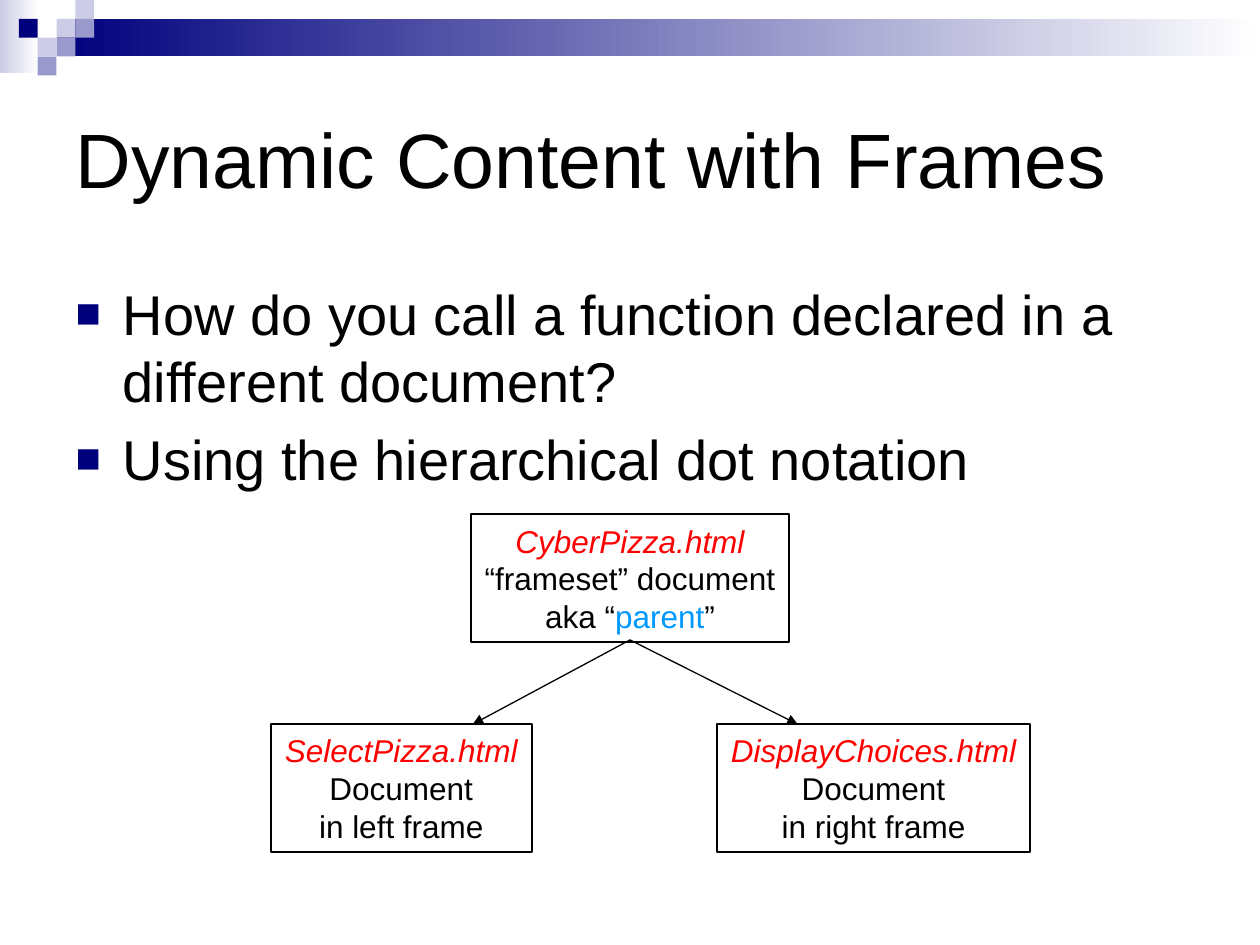
from dataclasses import dataclass

from lxml import etree
from pptx import Presentation
from pptx import util as u
from pptx.dml.color import RGBColor
from pptx.enum import shapes, text
from pptx.oxml import ns


@dataclass(frozen=True)
class Theme:
    font: str = "Arial"
    ink: str = "000000"
    paper: str = "FFFFFF"
    navy: str = "00007D"
    mid: str = "9999CC"
    pale: str = "CCCCE6"
    file_name: str = "FF0000"
    keyword: str = "0099FF"
    title_size: int = 44
    body_size: int = 32
    box_size: int = 18


class SlideBuilder:
    """Draws styled elements on the current slide."""

    def __init__(self, theme, page):
        self.theme = theme
        self.page = page

    def place(self, box, left, top, width, height):
        box.left, box.top, box.width, box.height = map(u.Cm, (left, top, width, height))

    def style(self, para, size, color=None, align=text.PP_ALIGN.LEFT, italic=False):
        para.alignment = align
        para.font.name = self.theme.font
        para.font.size = u.Pt(size)
        para.font.italic = italic
        if color:
            para.font.color.rgb = RGBColor.from_string(color)

    def rectangle(self, left, top, width, height):
        box = self.page.shapes.add_shape(
            shapes.MSO_SHAPE.RECTANGLE, *map(u.Cm, (left, top, width, height)))
        box.shadow.inherit = False
        return box

    def tile(self, left, top, width, height, *colors):
        box = self.rectangle(left, top, width, height)
        box.line.fill.background()
        if len(colors) == 1:
            box.fill.solid()
            box.fill.fore_color.rgb = RGBColor.from_string(colors[0])
            return
        box.fill.gradient()
        box.fill.gradient_angle = 0
        for stop, color in zip(box.fill.gradient_stops, colors):
            stop.color.rgb = RGBColor.from_string(color)

    def title(self, words, *place):
        box = self.page.shapes.title
        self.place(box, *place)
        frame = box.text_frame
        frame.text = words
        frame.auto_size = text.MSO_AUTO_SIZE.NONE
        frame.vertical_anchor = text.MSO_ANCHOR.MIDDLE
        self.style(frame.paragraphs[0], self.theme.title_size, self.theme.ink)

    def bullets(self, items, *place):
        box = self.page.placeholders[1]
        self.place(box, *place)
        frame = box.text_frame
        frame.text = "\n".join(items)
        frame.auto_size = text.MSO_AUTO_SIZE.NONE
        for para in frame.paragraphs:
            self.style(para, self.theme.body_size, self.theme.ink)
            para.space_before = u.Pt(self.theme.body_size * 0.2)
            self.bullet(para)

    def bullet(self, para):
        props = para._p.get_or_add_pPr()
        indent = u.Cm(0.95)
        props.set("marL", str(indent))
        props.set("indent", str(-indent))
        color = etree.Element(ns.qn("a:buClr"))
        etree.SubElement(color, ns.qn("a:srgbClr"), val=self.theme.navy)
        marks = [color,
                 etree.Element(ns.qn("a:buSzPct"), val="75000"),
                 etree.Element(ns.qn("a:buFont"), typeface=self.theme.font),
                 etree.Element(ns.qn("a:buChar"), char="■")]
        default_run = props.find(ns.qn("a:defRPr"))
        for mark in marks:
            default_run.addprevious(mark)

    def document(self, lines, left, top, width, height):
        box = self.rectangle(left, top, width, height)
        box.fill.background()
        box.line.color.rgb = RGBColor.from_string(self.theme.ink)
        box.line.width = u.Pt(1)
        frame = box.text_frame
        frame.word_wrap = False
        frame.auto_size = text.MSO_AUTO_SIZE.SHAPE_TO_FIT_TEXT
        for index, spans in enumerate(lines):
            para = frame.add_paragraph() if index else frame.paragraphs[0]
            self.style(para, self.theme.box_size, align=text.PP_ALIGN.CENTER,
                       italic=index == 0)
            for words, color in spans:
                span = para.add_run()
                span.text = words
                span.font.color.rgb = RGBColor.from_string(color)

    def arrow(self, *ends):
        line = self.page.shapes.add_connector(
            shapes.MSO_CONNECTOR.STRAIGHT, *map(u.Cm, ends))
        line.line.color.rgb = RGBColor.from_string(self.theme.ink)
        line.line.width = u.Pt(0.75)
        etree.SubElement(line.line._get_or_add_ln(), ns.qn("a:tailEnd"), type="triangle")
        etree.SubElement(line._element.spPr, ns.qn("a:effectLst"))


def main():
    deck = Presentation()
    deck.slide_width, deck.slide_height = u.Cm(25.4), u.Cm(19.05)
    page = deck.slides.add_slide(deck.slide_layouts[1])
    theme = Theme()
    builder = SlideBuilder(theme, page)

    builder.tile(0, 0, 0.78, 1.48, theme.pale, theme.paper)
    builder.tile(1.14, 0.38, 24.26, 0.76, theme.navy, theme.paper)
    step = 0.38
    tiles = [(3, 1, theme.pale), (4, 0, theme.pale), (4, 1, theme.mid),
             (2, 2, theme.pale), (1, 1, theme.navy), (3, 2, theme.mid),
             (2, 3, theme.mid)]
    for column, row, color in tiles:
        builder.tile(column * step, row * step, step, step, color)

    builder.title("Dynamic Content with Frames", 1.27, 1.27, 22.86, 3.81)
    builder.bullets(["How do you call a function declared in a different document?",
                     "Using the hierarchical dot notation"], 1.27, 5.5, 22.86, 4.88)

    ink, red = theme.ink, theme.file_name
    builder.document([[("CyberPizza.html", red)],
                      [("“frameset” document", ink)],
                      [("aka “", ink), ("parent", theme.keyword), ("”", ink)]],
                     9.5, 10.37, 6.4, 2.58)
    frames = [("SelectPizza.html", "left", 5.46, 5.26, 9.53),
              ("DisplayChoices.html", "right", 14.45, 6.32, 16.08)]
    for name, side, left, width, tip in frames:
        builder.document([[(name, red)], [("Document", ink)], [(f"in {side} frame", ink)]],
                         left, 14.6, width, 2.58)
        builder.arrow(12.7, 12.9, tip, 14.6)

    deck.save("out.pptx")


if __name__ == "__main__":
    main()
